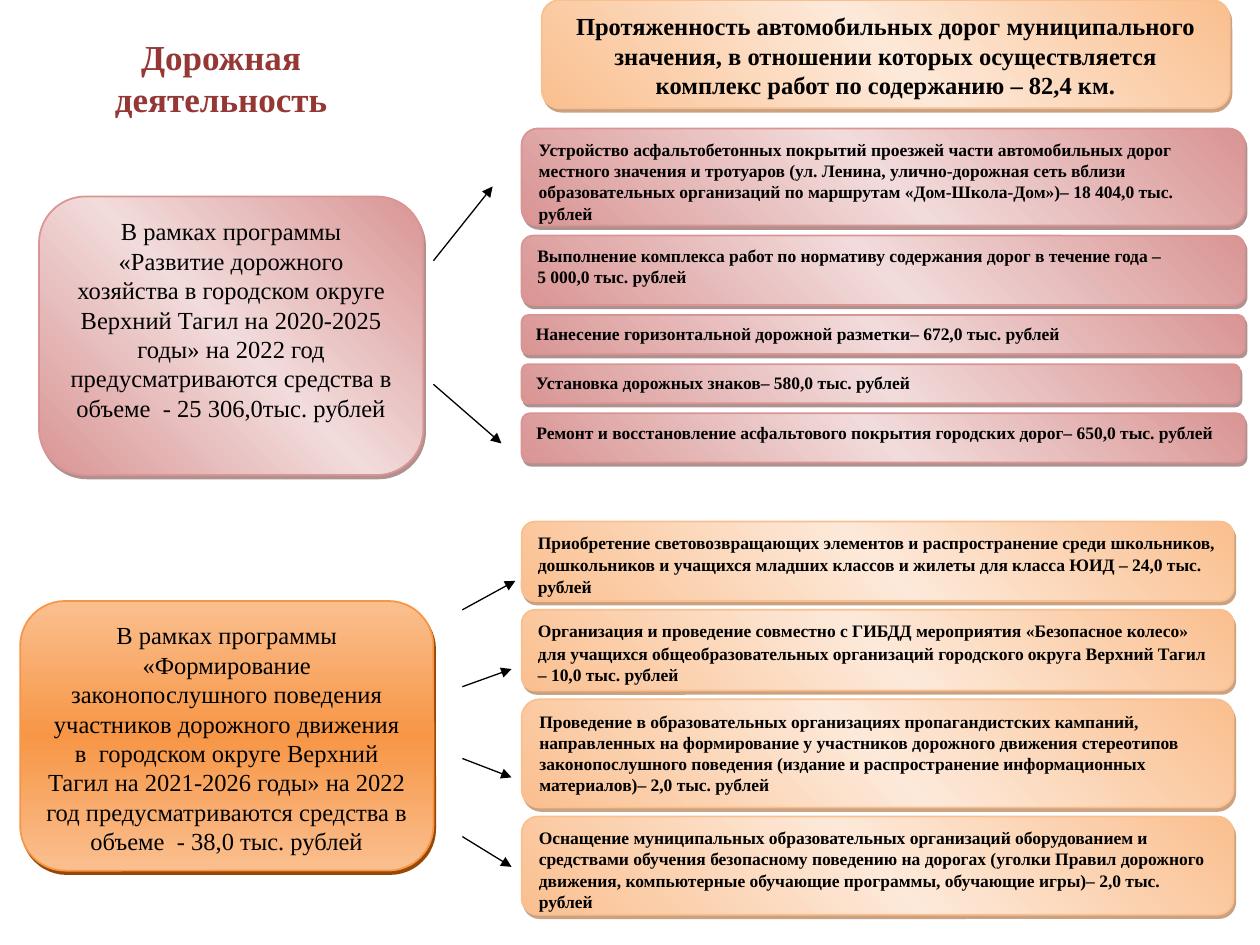
from dataclasses import dataclass

import lxml.etree
import pptx
import pptx.dml.color
import pptx.enum.shapes
import pptx.enum.text
import pptx.oxml
import pptx.oxml.ns
import pptx.util

RGB = pptx.dml.color.RGBColor
ALIGN = pptx.enum.text.PP_ALIGN
BLACK = RGB(0x00, 0x00, 0x00)
TITLE_RED = RGB(0x95, 0x37, 0x35)
ROSE, PALE_ROSE, DARK_ROSE = RGB(0xD9, 0x95, 0x94), RGB(0xF2, 0xDB, 0xDB), RGB(0x62, 0x24, 0x23)
PEACH, PALE_PEACH, BROWN = RGB(0xFA, 0xBF, 0x8F), RGB(0xFD, 0xE9, 0xD9), RGB(0x97, 0x47, 0x06)
ORANGE = RGB(0xF7, 0x96, 0x46)
SERIF = "Times New Roman"

WIDTH, HEIGHT = pptx.util.Inches(10), pptx.util.Inches(7.5)
COLUMNS, ROWS = 100, 75
MEASURE_COLUMN = 41.4


@dataclass(frozen=True)
class Style:
    edge: RGB
    middle: RGB
    line: RGB
    shadow: RGB
    shadow_percent: int = 50
    angle: int = 315


@dataclass(frozen=True)
class Area:
    """Place on the grid, in columns and rows."""
    column: float
    row: float
    columns: float
    rows: float


@dataclass(frozen=True)
class Measure:
    """A funded measure; "|" stands for a space in the wider Calibri."""
    text: str
    rows: float
    columns: float


@dataclass(frozen=True)
class Arrow:
    start: tuple[float, float]
    end: tuple[float, float]


ROSE_STYLE = Style(ROSE, PALE_ROSE, ROSE, DARK_ROSE)
PEACH_STYLE = Style(PEACH, PALE_PEACH, PEACH, BROWN)
ORANGE_STYLE = Style(PEACH, ORANGE, ORANGE, BROWN, shadow_percent=100, angle=90)

ROAD_LENGTH = ("Протяженность автомобильных дорог муниципального значения, в отношении которых "
               "осуществляется комплекс работ по содержанию – 82,4 км.")
ROAD_PROGRAM = ("В рамках программы «Развитие дорожного хозяйства в городском округе Верхний Тагил "
                "на 2020-2025 годы» на 2022 год предусматриваются средства в объеме  - "
                "25 306,0тыс. рублей")
SAFETY_PROGRAM = ("В рамках программы «Формирование законопослушного поведения участников дорожного "
                  "движения в  городском округе Верхний Тагил на 2021-2026 годы» на 2022 год "
                  "предусматриваются средства в объеме  - 38,0 тыс. рублей")
ROAD_MEASURES = [
    Measure("Устройство асфальтобетонных покрытий проезжей части автомобильных дорог местного "
            "значения и тротуаров (ул. Ленина, улично-дорожная сеть вблизи образовательных "
            "организаций по маршрутам «Дом-Школа-Дом»)– 18 404,0 тыс. рублей", 7.7, 57.4),
    Measure("Выполнение комплекса работ по нормативу содержания дорог в течение года –\v"
            "5 000,0 тыс. рублей", 5.5, 57.4),
    Measure("Нанесение горизонтальной дорожной разметки– 672,0 тыс. рублей", 3.1, 57.4),
    Measure("Установка дорожных знаков– 580,0 тыс. рублей", 3.1, 57),
    Measure("Ремонт и восстановление асфальтового покрытия городских дорог– 650,0 тыс. рублей",
            3.9, 57.4),
]
SAFETY_MEASURES = [
    Measure("Приобретение световозвращающих элементов и распространение среди школьников, "
            "дошкольников и учащихся младших классов и жилеты для|класса ЮИД – 24,0 тыс. рублей",
            6.3, 56.5),
    Measure("Организация и проведение совместно с ГИБДД мероприятия «Безопасное колесо» для "
            "учащихся общеобразовательных организаций городского|округа Верхний|Тагил – 10,0 "
            "тыс. рублей", 6.4, 56.5),
    Measure("Проведение в образовательных организациях пропагандистских кампаний, направленных на "
            "формирование у участников дорожного движения стереотипов законопослушного поведения "
            "(издание и распространение информационных материалов)– 2,0 тыс. рублей", 8.6, 56.5),
    Measure("Оснащение муниципальных образовательных организаций оборудованием и средствами "
            "обучения безопасному поведению на дорогах (уголки Правил дорожного движения, "
            "компьютерные обучающие программы, обучающие игры)– 2,0 тыс. рублей", 7.8, 56.5),
]
ARROWS = [
    Arrow((34.4, 20.7), (39.1, 14.8)),
    Arrow((34.4, 30.5), (39.8, 35.2)),
    Arrow((36.7, 48.4), (40.9, 46.1)),
    Arrow((36.7, 54.5), (40.6, 53.1)),
    Arrow((36.7, 60.2), (40.6, 61.7)),
    Arrow((36.7, 66.4), (40.6, 68.8)),
]


def across(columns: float) -> int:
    return round(WIDTH * columns / COLUMNS)


def down(rows: float) -> int:
    return round(HEIGHT * rows / ROWS)


def place(area: Area) -> tuple[int, int, int, int]:
    return across(area.column), down(area.row), across(area.columns), down(area.rows)


def format_font(font, size: float, color: RGB, bold: bool, name: str = SERIF) -> None:
    font.name, font.size, font.bold = name, pptx.util.Pt(size), bold
    font.color.rgb = color


def paint(shape, style: Style) -> None:
    """Give the shape its mirrored gradient, outline and hard shadow."""
    shape.line.color.rgb = style.line
    shape.line.width = pptx.util.Pt(1)
    stops = "".join(f'<a:gs pos="{position}"><a:srgbClr val="{color}"/></a:gs>'
                    for position, color in
                    ((0, style.edge), (50000, style.middle), (100000, style.edge)))
    namespace = pptx.oxml.ns.nsdecls("a")
    gradient = pptx.oxml.parse_xml(
        f'<a:gradFill {namespace} rotWithShape="1"><a:gsLst>{stops}</a:gsLst>'
        f'<a:lin ang="{style.angle * 60000}" scaled="1"/></a:gradFill>')
    shadow = pptx.oxml.parse_xml(
        f'<a:effectLst {namespace}><a:outerShdw blurRad="0" dist="{pptx.util.Pt(2.2)}" '
        f'dir="{63 * 60000}" algn="ctr" rotWithShape="0"><a:srgbClr val="{style.shadow}">'
        f'<a:alpha val="{style.shadow_percent * 1000}"/></a:srgbClr></a:outerShdw></a:effectLst>')
    outline = shape.line._get_or_add_ln()
    outline.addprevious(gradient)
    outline.addnext(shadow)


def add_card(slide, area: Area, style: Style, text: str, size: float,
             bold: bool, alignment) -> None:
    card = slide.shapes.add_shape(pptx.enum.shapes.MSO_SHAPE.ROUNDED_RECTANGLE, *place(area))
    paint(card, style)
    frame = card.text_frame
    frame.word_wrap = True
    frame.vertical_anchor = pptx.enum.text.MSO_ANCHOR.TOP
    paragraph = frame.paragraphs[0]
    first, *others = text.split("|")
    paragraph.text = first
    for part in others:
        space = paragraph.add_run()
        space.text = " "
        format_font(space.font, 11, BLACK, False, "Calibri")
        paragraph.add_run().text = part
    paragraph.alignment = alignment
    paragraph.space_after = pptx.util.Pt(10)
    for run in paragraph.runs:
        if run.font.name is None:
            format_font(run.font, size, BLACK, bold)


def add_measures(slide, measures: list[Measure], row: float, gap: float, style: Style) -> None:
    for measure in measures:
        area = Area(MEASURE_COLUMN, row, measure.columns, measure.rows)
        add_card(slide, area, style, measure.text, 10, True, ALIGN.LEFT)
        row += measure.rows + gap


def add_arrow(slide, arrow: Arrow) -> None:
    connector = slide.shapes.add_connector(
        pptx.enum.shapes.MSO_CONNECTOR.STRAIGHT,
        across(arrow.start[0]), down(arrow.start[1]), across(arrow.end[0]), down(arrow.end[1]))
    connector.line.color.rgb = BLACK
    connector.line.width = pptx.util.Pt(0.75)
    qn = pptx.oxml.ns.qn
    lxml.etree.SubElement(connector.line._get_or_add_ln(), qn("a:tailEnd"), type="triangle")
    lxml.etree.SubElement(connector._element.spPr, qn("a:effectLst"))


def add_title(slide, area: Area, text: str) -> None:
    title = slide.shapes.title
    title.left, title.top, title.width, title.height = place(area)
    frame = title.text_frame
    frame.text = text
    frame.word_wrap = True
    frame.auto_size = pptx.enum.text.MSO_AUTO_SIZE.SHAPE_TO_FIT_TEXT
    frame.vertical_anchor = pptx.enum.text.MSO_ANCHOR.MIDDLE
    frame.paragraphs[0].alignment = ALIGN.CENTER
    format_font(frame.paragraphs[0].runs[0].font, 20, TITLE_RED, True)


def main() -> None:
    deck = pptx.Presentation()
    deck.slide_width, deck.slide_height = WIDTH, HEIGHT
    slide = deck.slides.add_slide(deck.slide_layouts.get_by_name("Title Only"))
    add_title(slide, Area(2.3, 2.3, 30.5, 7.7), "Дорожная деятельность")
    add_card(slide, Area(43, 0, 54.6, 8.6), PEACH_STYLE, ROAD_LENGTH, 14, True, ALIGN.CENTER)
    add_card(slide, Area(3.1, 15.6, 30.5, 22.1), ROSE_STYLE, ROAD_PROGRAM, 14, False, ALIGN.CENTER)
    add_card(slide, Area(1.6, 47.7, 32.8, 21.4), ORANGE_STYLE, SAFETY_PROGRAM, 14, False,
             ALIGN.CENTER)
    add_measures(slide, ROAD_MEASURES, 10.2, 0.8, ROSE_STYLE)
    add_measures(slide, SAFETY_MEASURES, 41.4, 0.7, PEACH_STYLE)
    for arrow in ARROWS:
        add_arrow(slide, arrow)
    deck.save("out.pptx")


if __name__ == "__main__":
    main()
